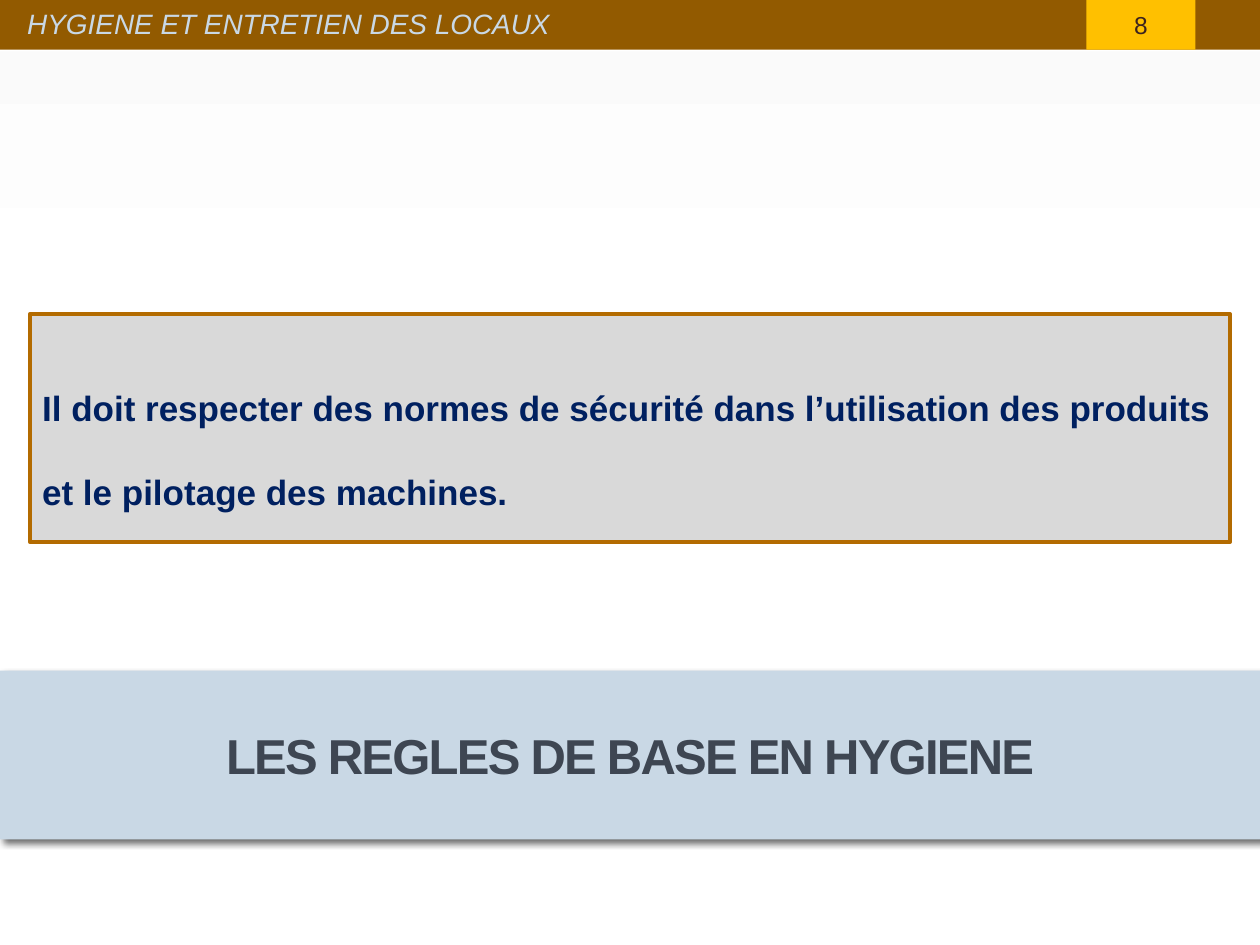
from lxml import etree
from pptx import Presentation
from pptx import util as u
from pptx.dml.color import RGBColor
from pptx.enum import shapes, text
from pptx.oxml import ns

WHITE = RGBColor(0xFF, 0xFF, 0xFF)
OFF_WHITE = RGBColor(0xFA, 0xFA, 0xFA)
BROWN = RGBColor(0x92, 0x5A, 0x00)
ORANGE = RGBColor(0xB3, 0x6B, 0x00)
YELLOW = RGBColor(0xFF, 0xC0, 0x00)
GREY = RGBColor(0xD9, 0xD9, 0xD9)
PALE_BLUE = RGBColor(0xC9, 0xD8, 0xE5)
NAVY = RGBColor(0x00, 0x20, 0x60)
SLATE = RGBColor(0x3E, 0x46, 0x52)
DARK_BROWN = RGBColor(0x3C, 0x23, 0x1F)


class SlideBuilder:
    font = "Arial"

    def __init__(self, presentation):
        self.slide = presentation.slides.add_slide(presentation.slide_layouts[5])

    def background(self, top, bottom, end):
        fill = self.slide.background.fill
        fill.gradient()
        fill.gradient_angle = 270
        for stop, color, position in zip(fill.gradient_stops, (top, bottom), (0, end)):
            stop.color.rgb = color
            stop.position = position

    def rectangle(self, left, top, width, height, fill, line=None):
        shape = self.slide.shapes.add_shape(
            shapes.MSO_SHAPE.RECTANGLE, u.Cm(left), u.Cm(top), u.Cm(width), u.Cm(height))
        shape.shadow.inherit = False
        shape.fill.solid()
        shape.fill.fore_color.rgb = fill
        if line is None:
            shape.line.fill.background()
        else:
            shape.line.color.rgb = line
            shape.line.width = u.Pt(2.08)
        return shape

    def text_box(self, left, top, width, height):
        return self.slide.shapes.add_textbox(u.Cm(left), u.Cm(top), u.Cm(width), u.Cm(height))

    def title(self, left, top, width, height, fill):
        shape = self.slide.shapes.title
        shape.left, shape.top = u.Cm(left), u.Cm(top)
        shape.width, shape.height = u.Cm(width), u.Cm(height)
        shape.fill.solid()
        shape.fill.fore_color.rgb = fill
        return shape

    def drop_shadow(self, shape, blur, distance, angle, opacity):
        shape.shadow.inherit = False
        effects = shape._element.spPr.find(ns.qn("a:effectLst"))
        shadow = etree.SubElement(
            effects, ns.qn("a:outerShdw"), blurRad=str(u.Pt(blur)),
            dist=str(u.Pt(distance)), dir=str(angle * 60000), algn="tl", rotWithShape="0")
        color = etree.SubElement(shadow, ns.qn("a:srgbClr"), val="000000")
        etree.SubElement(color, ns.qn("a:alpha"), val=str(opacity * 1000))

    def add_text(self, shape, words, size, color, align=text.PP_ALIGN.LEFT,
                 bold=False, italic=False, line_spacing=None, tracking=None):
        frame = shape.text_frame
        frame.word_wrap = True
        frame.auto_size = text.MSO_AUTO_SIZE.NONE
        frame.vertical_anchor = text.MSO_ANCHOR.MIDDLE
        paragraph = frame.paragraphs[0]
        paragraph.alignment = align
        paragraph.line_spacing = line_spacing
        run = paragraph.add_run()
        run.text = words
        run.font.name = self.font
        run.font.size = u.Pt(size)
        run.font.bold = bold
        run.font.italic = italic
        run.font.color.rgb = color
        if tracking is not None:
            run.font._element.set("spc", str(tracking * 100))


def main():
    presentation = Presentation()
    presentation.slide_width, presentation.slide_height = u.Cm(25.4), u.Cm(19.05)
    builder = SlideBuilder(presentation)
    builder.background(OFF_WHITE, WHITE, 0.33)

    builder.rectangle(0, 0.41, 25.4, 0.63, WHITE)
    builder.rectangle(0, 0, 25.4, 1, BROWN)
    number = builder.rectangle(21.9, 0, 2.2, 1, YELLOW)
    builder.add_text(number, "8", 14, DARK_BROWN, align=text.PP_ALIGN.CENTER)
    header = builder.text_box(0.3, 0.03, 20.8, 0.9)
    builder.add_text(header, "HYGIENE ET ENTRETIEN DES LOCAUX", 16, PALE_BLUE, italic=True)

    rule = builder.rectangle(0.6, 6.33, 24.2, 4.6, GREY, line=ORANGE)
    builder.add_text(
        rule,
        "Il doit respecter des normes de sécurité dans l’utilisation des produits "
        "et le pilotage des machines.",
        20, NAVY, bold=True, line_spacing=2.0)

    title = builder.title(0, 13.52, 25.4, 3.4, PALE_BLUE)
    builder.drop_shadow(title, blur=4, distance=3, angle=45, opacity=59)
    builder.add_text(title, "LES REGLES DE BASE EN HYGIENE", 28, SLATE,
                     align=text.PP_ALIGN.CENTER, bold=True, tracking=-1)

    presentation.save("out.pptx")


if __name__ == "__main__":
    main()
